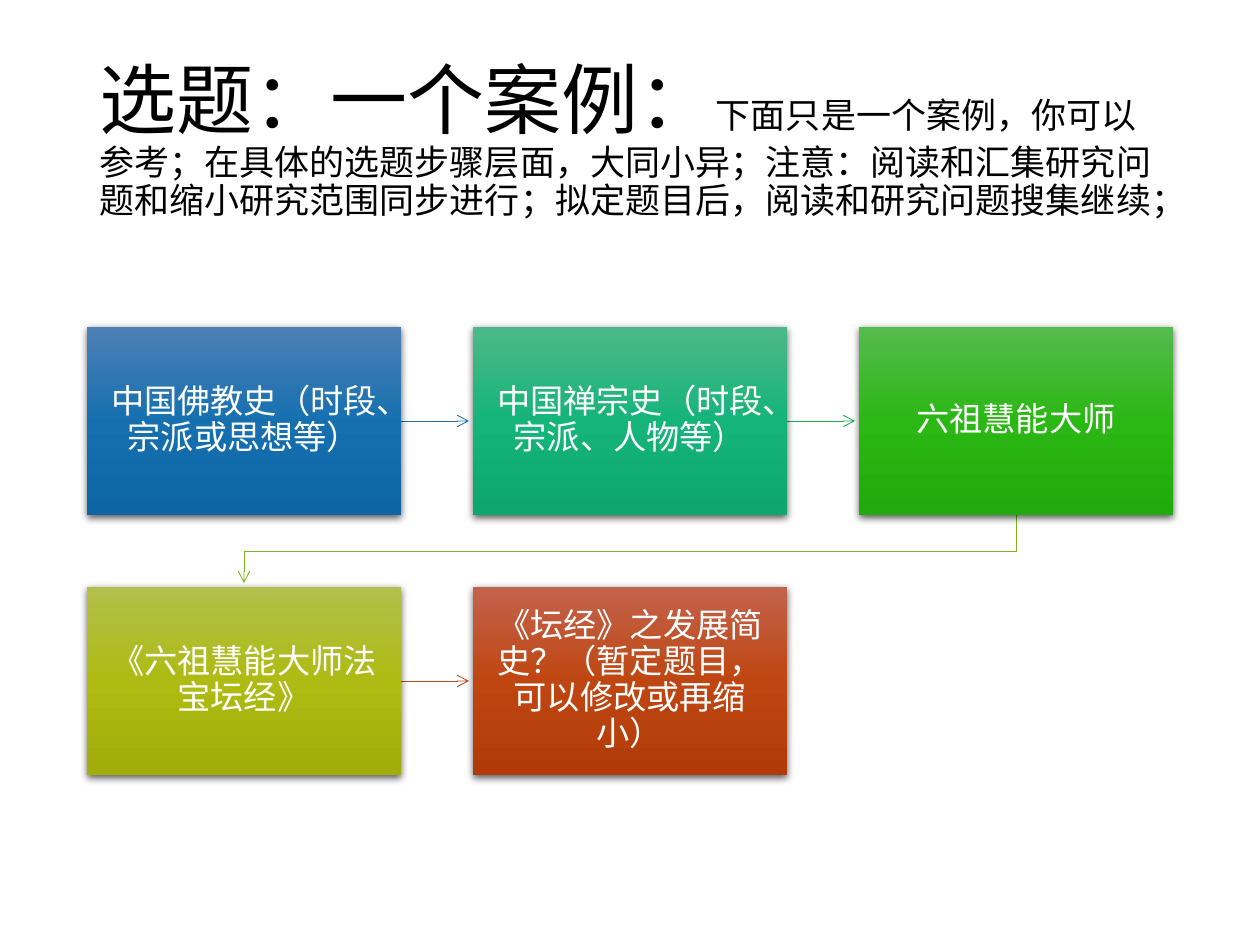
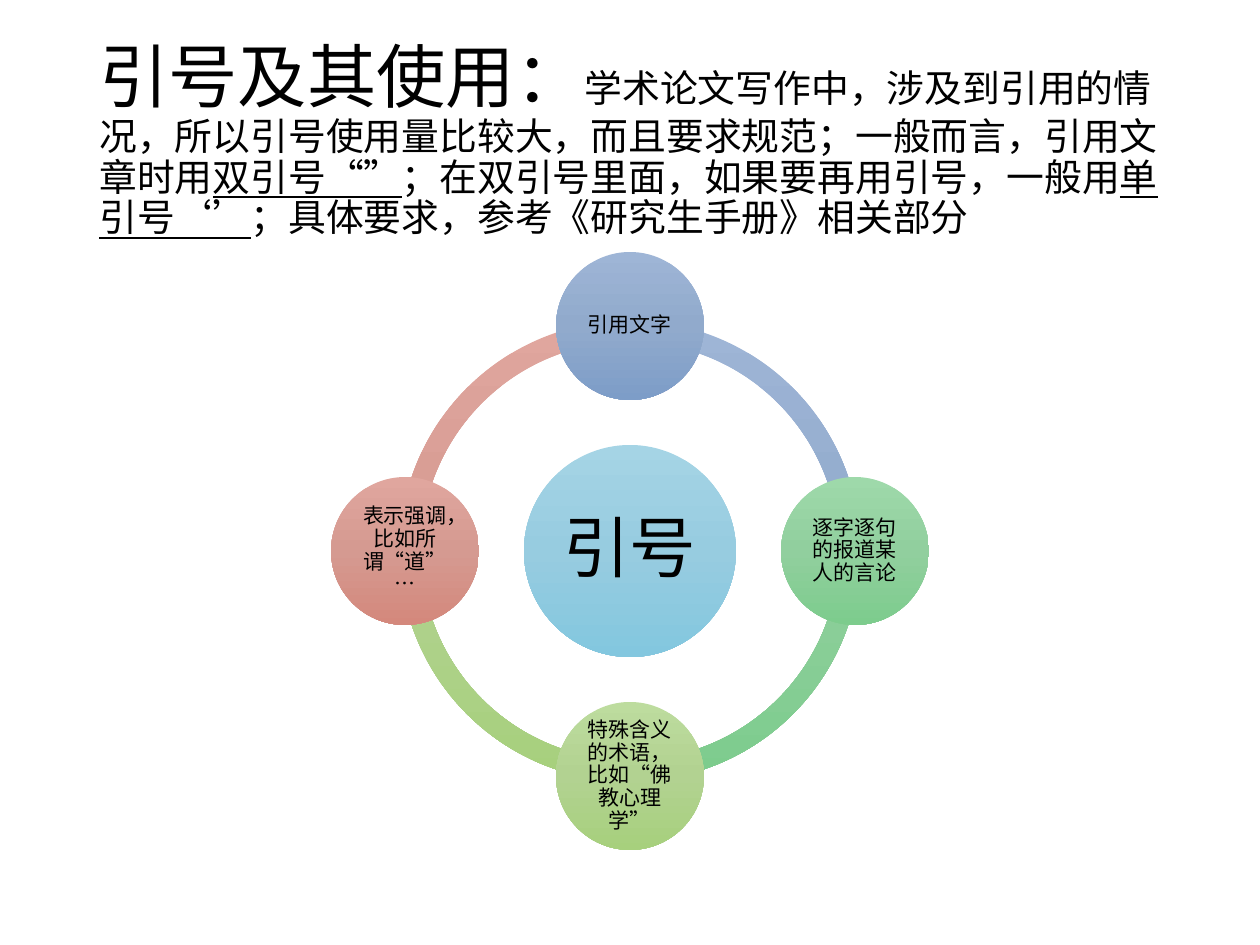
import math
from copy import deepcopy
from pptx import Presentation
from pptx import util as u
from pptx.dml import color
from pptx.enum import lang, shapes, text
from pptx.oxml import ns
from lxml import etree

EMU_PER_PX = 914400 / 126
SLIDE_SIZE = (1260, 945)
TITLE_BOX = (87, 50, 1086, 183)
FONT = "Times New Roman"

COLOURS = {
    "text": "000000",
    "box_text": "FFFFFF",
    "shadow": "000000",
    "blue_arrow": "1D6FA9",
    "green_arrow": "1CAE53",
    "lime_arrow": "7FB21A",
    "red_arrow": "B74919",
}
GRADIENTS = {
    "blue": ("4E80B5", "1670B0", "0D65A3"),
    "teal": ("4EB888", "15B47A", "0CA66E"),
    "green": ("55BB4E", "2BB714", "21AA0B"),
    "olive": ("B3BF4D", "ADBB12", "A0AD0A"),
    "red": ("C2634D", "BF4611", "B13B08"),
    "pale_cyan": ("A5D4E5", "97CCE0", "83C7DF"),
    "pale_blue": ("9EB5D6", "91AACC", "7D9DC8"),
    "pale_green": ("9ED9AA", "91CF9E", "7DCC8D"),
    "pale_lime": ("BDDC9E", "B2D291", "A7D07D"),
    "pale_red": ("E0A69E", "D59A91", "D4887C"),
}

BOX_WIDTH, BOX_HEIGHT = 314, 188
BOX_LEFT, BOX_TOP = 87, 327
COLUMN_STEP, ROW_STEP = 386, 260
ARROW_GAP = 4
STEPS = [
    ("中国佛教史（时段、宗派或思想等）", "blue"),
    ("中国禅宗史（时段、宗派、人物等）", "teal"),
    ("六祖慧能大师", "green"),
    ("《六祖慧能大师法宝坛经》", "olive"),
    ("《坛经》之发展简史？（暂定题目，可以修改或再缩小）", "red"),
]

CENTRE_X, CENTRE_Y = 630, 551
HUB_DIAMETER, USE_DIAMETER, RING_DIAMETER = 212, 148, 461
ORBIT_RADIUS = 225
QUARTER_TURN = 54
USES = [
    ("逐字逐句的报道某人的言论", "pale_green"),
    ("特殊含义的术语，比如“佛教心理学”", "pale_lime"),
    ("表示强调，比如所谓“道”…", "pale_red"),
    ("引用文字", "pale_blue"),
]


def px(length):
    return u.Emu(round(length * EMU_PER_PX))


def rgb(name):
    return color.RGBColor.from_string(COLOURS[name])


def style_paragraph(paragraph, size, colour):
    paragraph.line_spacing = 0.9
    paragraph.font.name = FONT
    paragraph.font.size = u.Pt(size)
    paragraph.font.color.rgb = rgb(colour)
    paragraph.font.language_id = lang.MSO_LANGUAGE_ID.SIMPLIFIED_CHINESE


def add_title(slide, heading, heading_size, parts, size):
    frame = slide.shapes.add_textbox(*map(px, TITLE_BOX)).text_frame
    frame.word_wrap = True
    frame.vertical_anchor = text.MSO_ANCHOR.MIDDLE
    paragraph = frame.paragraphs[0]
    style_paragraph(paragraph, size, "text")
    run = paragraph.add_run()
    run.text = heading
    run.font.size = u.Pt(heading_size)
    for index, part in enumerate(parts):
        run = paragraph.add_run()
        run.text = part
        if index % 2:
            run.font.underline = True


def add_gradient_shape(slide, kind, box, gradient):
    shape = slide.shapes.add_shape(kind, *map(px, box))
    shape.shadow.inherit = False
    shape.line.fill.background()
    shape.fill.gradient()
    shape.fill.gradient_angle = 270
    stop_list = shape.element.spPr.find(".//" + ns.qn("a:gsLst"))
    stop_list.append(deepcopy(stop_list[-1]))
    for index, (stop, value) in enumerate(zip(shape.fill.gradient_stops, GRADIENTS[gradient])):
        stop.position = index / 2
        stop.color.rgb = color.RGBColor.from_string(value)
    return shape


def write_label(shape, label, size, colour, inset):
    frame = shape.text_frame
    frame.word_wrap = True
    frame.vertical_anchor = text.MSO_ANCHOR.MIDDLE
    frame.margin_left = frame.margin_right = px(inset)
    frame.margin_top = frame.margin_bottom = px(inset)
    paragraph = frame.paragraphs[0]
    paragraph.text = label
    paragraph.alignment = text.PP_ALIGN.CENTER
    style_paragraph(paragraph, size, colour)


def add_drop_shadow(shape):
    effects = shape.element.spPr.find(ns.qn("a:effectLst"))
    shadow = etree.SubElement(
        effects, ns.qn("a:outerShdw"), blurRad=str(u.Pt(4.5)), dist=str(u.Pt(1.5)),
        dir="5400000", algn="ctr", rotWithShape="0")
    shade = etree.SubElement(shadow, ns.qn("a:srgbClr"), val=COLOURS["shadow"])
    etree.SubElement(shade, ns.qn("a:alpha"), val="63000")


def style_arrow(arrow, colour):
    arrow.line.width = u.Pt(0.5)
    arrow.line.color.rgb = rgb(colour)
    line = arrow.line._get_or_add_ln()
    etree.SubElement(line, ns.qn("a:tailEnd"), type="arrow")


def add_straight_arrow(slide, start, end, colour):
    arrow = slide.shapes.add_connector(
        shapes.MSO_CONNECTOR.STRAIGHT, *map(px, (*start, *end)))
    etree.SubElement(arrow.element.spPr, ns.qn("a:effectLst"))
    style_arrow(arrow, colour)


def add_bent_arrow(slide, points, colour):
    builder = slide.shapes.build_freeform(*points[0], scale=EMU_PER_PX)
    builder.add_line_segments(points[1:], close=False)
    arrow = builder.convert_to_shape()
    arrow.fill.background()
    arrow.shadow.inherit = False
    style_arrow(arrow, colour)


def box_origin(index):
    row, column = divmod(index, 3)
    return BOX_LEFT + column * COLUMN_STEP, BOX_TOP + row * ROW_STEP


def add_step(slide, index, label, gradient):
    box = (*box_origin(index), BOX_WIDTH, BOX_HEIGHT)
    shape = add_gradient_shape(slide, shapes.MSO_SHAPE.RECTANGLE, box, gradient)
    add_drop_shadow(shape)
    write_label(shape, label, 19, "box_text", 19)


def add_step_arrow(slide, index, colour):
    left, top = box_origin(index)
    middle = top + BOX_HEIGHT // 2
    add_straight_arrow(slide, (left + BOX_WIDTH, middle),
                       (left + COLUMN_STEP - ARROW_GAP, middle), colour)


def add_row_arrow(slide, colour):
    last_left, first_row = box_origin(2)
    first_left, second_row = box_origin(3)
    start_x, end_x = (left + BOX_WIDTH // 2 for left in (last_left, first_left))
    bottom = first_row + BOX_HEIGHT
    bend = (bottom + second_row) // 2
    add_bent_arrow(slide, [(start_x, bottom), (start_x, bend), (end_x, bend),
                           (end_x, second_row - ARROW_GAP)], colour)


def centred_box(x, y, diameter):
    return x - diameter / 2, y - diameter / 2, diameter, diameter


def add_circle(slide, x, y, diameter, gradient, label, size, inset):
    circle = add_gradient_shape(
        slide, shapes.MSO_SHAPE.OVAL, centred_box(x, y, diameter), gradient)
    write_label(circle, label, size, "text", inset)


def add_ring_arc(slide, quarter, gradient):
    arc = add_gradient_shape(slide, shapes.MSO_SHAPE.BLOCK_ARC,
                             centred_box(CENTRE_X, CENTRE_Y, RING_DIAMETER), gradient)
    arc.adjustments[0] = quarter * QUARTER_TURN
    arc.adjustments[1] = (quarter + 1) % 4 * QUARTER_TURN
    arc.adjustments[2] = 0.046


def build_topic_slide(slide):
    add_title(slide, "选题：一个案例：", 44, [
        "下面只是一个案例，你可以参考；在具体的选题步骤层面，大同小异；"
        "注意：阅读和汇集研究问题和缩小研究范围同步进行；"
        "拟定题目后，阅读和研究问题搜集继续；"], 20)
    for index, colour in ((0, "blue_arrow"), (1, "green_arrow"), (3, "red_arrow")):
        add_step_arrow(slide, index, colour)
    add_row_arrow(slide, "lime_arrow")
    for index, (label, gradient) in enumerate(STEPS):
        add_step(slide, index, label, gradient)


def build_quotation_slide(slide):
    add_title(slide, "引号及其使用：", 39.6, [
        "学术论文写作中，涉及到引用的情况，所以引号使用量比较大，"
        "而且要求规范；一般而言，引用文章时用",
        "双引号“”",
        "；在双引号里面，如果要再用引号，一般用",
        "单引号‘’",
        "；具体要求，参考《研究生手册》相关部分"], 21.6)
    for quarter, (label, gradient) in enumerate(USES):
        add_ring_arc(slide, quarter, gradient)
    add_circle(slide, CENTRE_X, CENTRE_Y, HUB_DIAMETER, "pale_cyan", "引号", 38, 6)
    for quarter, (label, gradient) in enumerate(USES):
        angle = math.radians(90 * quarter)
        add_circle(slide, CENTRE_X + ORBIT_RADIUS * math.cos(angle),
                   CENTRE_Y + ORBIT_RADIUS * math.sin(angle),
                   USE_DIAMETER, gradient, label, 12, 2)


def main():
    presentation = Presentation()
    presentation.slide_width, presentation.slide_height = map(px, SLIDE_SIZE)
    blank = presentation.slide_layouts[6]
    for build in (build_topic_slide, build_quotation_slide):
        build(presentation.slides.add_slide(blank))
    presentation.save("out.pptx")


if __name__ == "__main__":
    main()
